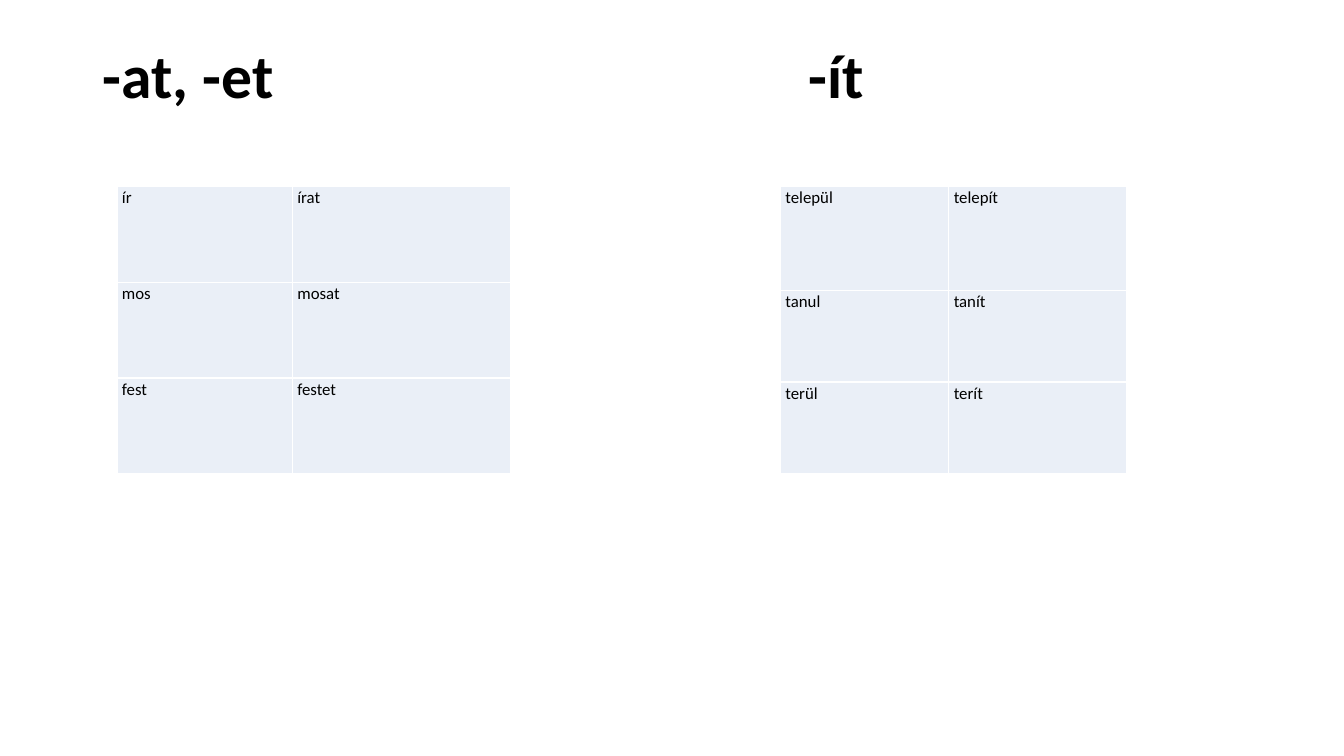
from lxml import etree
from pptx import Presentation
from pptx import util as u
from pptx.dml import color
from pptx.enum import text
from pptx.oxml import ns

SUFFIXES = ("-at, -et", "-ít")
AT_ET_VERBS = (("ír", "írat"), ("mos", "mosat"), ("fest", "festet"))
IT_VERBS = (("települ", "telepít"), ("tanul", "tanít"), ("terül", "terít"))


def rgb(value):
    """Turn a hex string into a colour."""
    return color.RGBColor.from_string(value)


def format_paragraph(para, size, spacing, bold=False):
    """Set the font, line spacing and left alignment of a paragraph."""
    para.alignment = text.PP_ALIGN.LEFT
    para.line_spacing = spacing
    para.font.name = "Calibri"
    para.font.size = u.Pt(size)
    para.font.bold = bold
    para.font.color.rgb = rgb("000000")


def add_title(page, left, top, width, height):
    """Place both suffixes in the title, the second one at a tab stop."""
    title = page.shapes.title
    title.left, title.top = u.Inches(left), u.Inches(top)
    title.width, title.height = u.Inches(width), u.Inches(height)
    frame = title.text_frame
    frame.word_wrap = True
    frame.auto_size = text.MSO_AUTO_SIZE.NONE
    frame.vertical_anchor = text.MSO_ANCHOR.TOP
    para = frame.paragraphs[0]
    para.text = "\t".join(SUFFIXES)
    tabs = etree.SubElement(para._p.get_or_add_pPr(), ns.qn("a:tabLst"))
    etree.SubElement(tabs, ns.qn("a:tab"), pos=str(u.Inches(7)), algn="l")
    format_paragraph(para, 44, 0.9, bold=True)


def add_borders(cell):
    """Draw a thin white line on each side of a cell."""
    properties = cell._tc.get_or_add_tcPr()
    for side in ("lnL", "lnR", "lnT", "lnB"):
        line = etree.SubElement(properties, ns.qn(f"a:{side}"), w=str(u.Pt(1)))
        fill = etree.SubElement(line, ns.qn("a:solidFill"))
        etree.SubElement(fill, ns.qn("a:srgbClr"), val="FFFFFF")


def add_verb_table(page, left, top, widths, heights, verbs):
    """Place a table of verbs and their causative forms."""
    table = page.shapes.add_table(
        len(heights), len(widths), u.Inches(left), u.Inches(top),
        u.Inches(sum(widths)), u.Inches(sum(heights))).table
    table.first_row = table.horz_banding = False
    for column, width in zip(table.columns, widths):
        column.width = u.Inches(width)
    for row, height, words in zip(table.rows, heights, verbs):
        row.height = u.Inches(height)
        for cell, word in zip(row.cells, words):
            cell.margin_left = cell.margin_right = u.Inches(0.05)
            cell.margin_top = cell.margin_bottom = 0
            add_borders(cell)
            cell.fill.solid()
            cell.fill.fore_color.rgb = rgb("EAEFF7")
            cell.text = word
            format_paragraph(cell.text_frame.paragraphs[0], 12, 1.07)


def main():
    """Build the slide and save it."""
    deck = Presentation()
    deck.slide_width, deck.slide_height = u.Inches(13.33), u.Inches(7.5)
    page = deck.slides.add_slide(deck.slide_layouts[5])
    add_title(page, 0.92, 0.4, 11.5, 1.45)
    add_verb_table(page, 1.16, 1.85, (1.74, 2.16), (0.95,) * 3, AT_ET_VERBS)
    add_verb_table(page, 7.74, 1.85, (1.67, 1.76), (1.03, 0.91, 0.91), IT_VERBS)
    deck.save("out.pptx")


if __name__ == "__main__":
    main()
